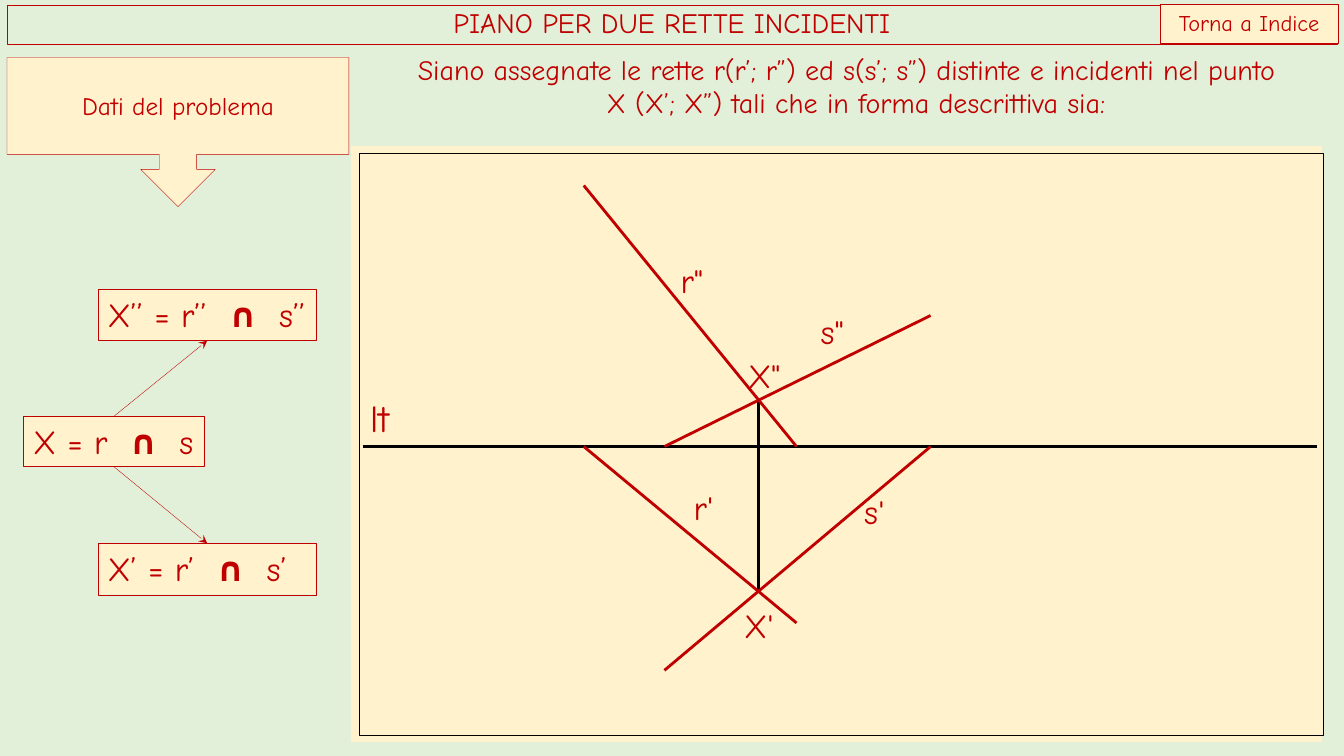
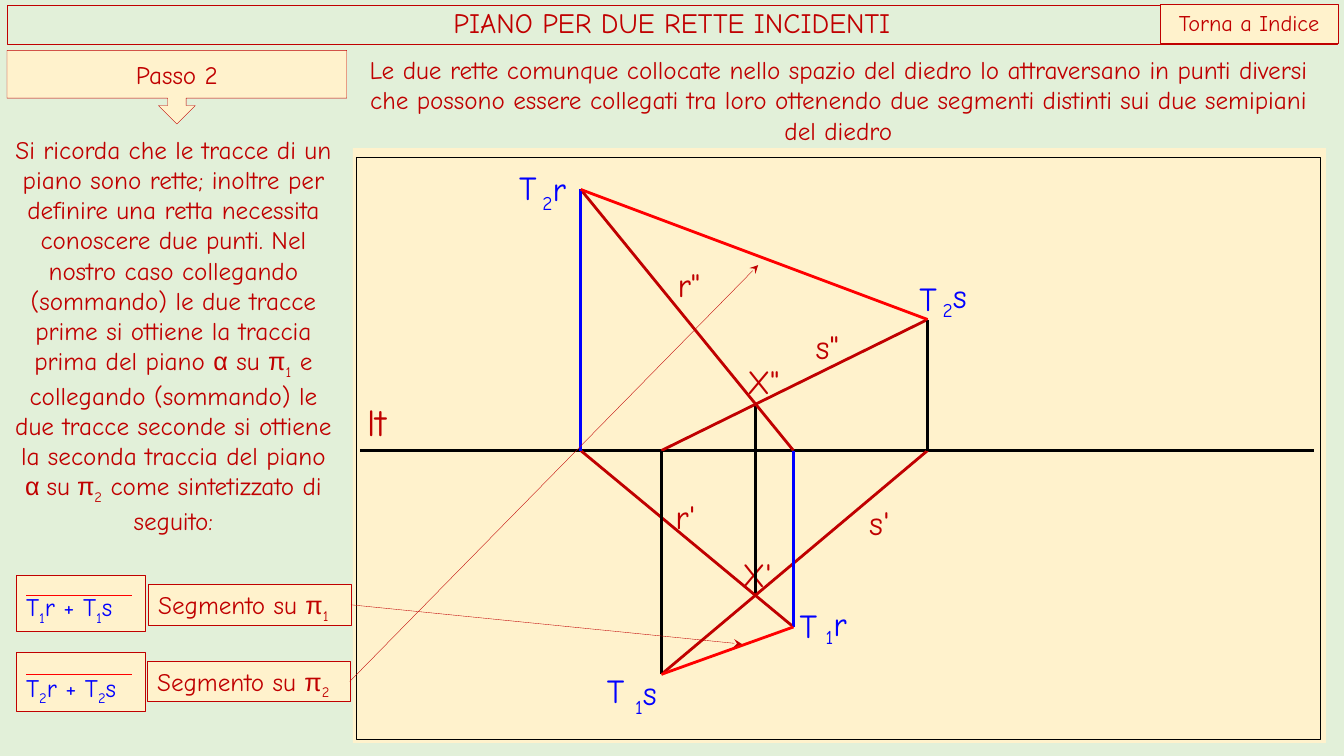
from lxml import etree
from pptx import Presentation
from pptx.dml.color import RGBColor
from pptx.enum import shapes, text
from pptx.oxml import ns
from pptx.util import Inches, Pt

COLORS = {
    "background": "E2F0D9",
    "paper": "FFF2CC",
    "dark_red": "C00000",
    "red": "FF0000",
    "blue": "0000FF",
    "black": "000000",
}
FONT = "Comic Neue"
GREEK_FONT = "Arial"
THIN = 0.25
HAIRLINE = 0
TOP, LEFT, BOTTOM, RIGHT = range(4)
RECTANGLE = shapes.MSO_SHAPE.RECTANGLE
CENTER = text.PP_ALIGN.CENTER
MIDDLE = text.MSO_ANCHOR.MIDDLE


def rgb(name):
    return RGBColor.from_string(COLORS[name])


def sub(value):
    return value, "sub"


def bold(value):
    return value, "bold"


def greek(value):
    return value, "greek"


def write(shape, paragraphs, size, color="dark_red", align=None,
          anchor=text.MSO_ANCHOR.TOP, grow=False):
    """Fill a shape with paragraphs: lists of strings or (string, style) runs."""
    frame = shape.text_frame
    frame.word_wrap = True
    frame.vertical_anchor = anchor
    if grow:
        frame.auto_size = text.MSO_AUTO_SIZE.SHAPE_TO_FIT_TEXT
    for index, parts in enumerate(paragraphs):
        paragraph = frame.add_paragraph() if index else frame.paragraphs[0]
        paragraph.alignment = align or text.PP_ALIGN.LEFT
        for part in parts:
            value, style = part if isinstance(part, tuple) else (part, None)
            run = paragraph.add_run()
            run.text = value
            run.font.size = Pt(size)
            run.font.name = GREEK_FONT if style == "greek" else FONT
            run.font.color.rgb = rgb(color)
            run.font.bold = style == "bold"
            if style == "sub":
                run._r.get_or_add_rPr().set("baseline", "-25000")
    return frame


def add_box(slide, box, fill="paper", line="dark_red", width=THIN, kind=RECTANGLE):
    shape = slide.shapes.add_shape(kind, *map(Inches, box))
    shape.shadow.inherit = False
    if fill:
        shape.fill.solid()
        shape.fill.fore_color.rgb = rgb(fill)
    else:
        shape.fill.background()
    if line:
        shape.line.color.rgb = rgb(line)
        shape.line.width = Pt(width)
    else:
        shape.line.fill.background()
    return shape


def add_text(slide, box, paragraphs, size):
    shape = slide.shapes.add_textbox(*map(Inches, box))
    write(shape, paragraphs, size, align=CENTER, grow=True)


def add_line(slide, start, end, color="dark_red", width=HAIRLINE, arrow=False):
    connector = slide.shapes.add_connector(
        shapes.MSO_CONNECTOR.STRAIGHT, *map(Inches, (*start, *end)))
    connector.line.color.rgb = rgb(color)
    connector.line.width = Pt(width)
    properties = connector._element.spPr
    if arrow:
        outline = properties.find(ns.qn("a:ln"))
        etree.SubElement(outline, ns.qn("a:tailEnd"), type="stealth")
    etree.SubElement(properties, ns.qn("a:effectLst"))
    return connector


def add_label(slide, parts, box, size=24, color="dark_red"):
    shape = add_box(slide, box, line=None)
    frame = write(shape, [parts], size, color, grow=True)
    frame.word_wrap = False
    frame.margin_left = frame.margin_right = 0
    frame.margin_top = frame.margin_bottom = 0


def add_callout(slide, box, caption):
    shape = add_box(slide, box, kind=shapes.MSO_SHAPE.DOWN_ARROW_CALLOUT)
    write(shape, [[caption]], 18, align=CENTER, anchor=MIDDLE)


def add_note(slide, box, parts, size):
    shape = add_box(slide, box)
    write(shape, [parts], size, grow=True)
    return shape


def add_slide(presentation):
    """Add a slide with the shared background, title band and index button."""
    slide = presentation.slides.add_slide(presentation.slide_layouts[6])
    slide.background.fill.solid()
    slide.background.fill.fore_color.rgb = rgb("background")
    title = add_box(slide, (0.07, 0.05, 13.19, 0.39), fill=None)
    frame = write(title, [["PIANO PER DUE RETTE INCIDENTI"]], 20,
                  align=CENTER, anchor=MIDDLE)
    frame.paragraphs[0].line_spacing = 0.9
    button = add_box(slide, (11.51, 0.04, 1.76, 0.39))
    write(button, [["Torna a Indice"]], 16, align=CENTER, grow=True)
    return slide


def projection_points(left, ground):
    """Points of the drawing, from the frame's left edge and the ground line."""
    offsets = {
        "ground_start": (0.03, 0), "ground_end": (9.49, 0),
        "X1": (3.95, 1.44), "X2": (3.95, -0.46),
        "T2r": (2.22, -2.59), "T2r_foot": (2.22, 0),
        "T1r": (4.33, 1.75), "T1r_foot": (4.33, 0),
        "T2s": (5.66, -1.3), "T2s_foot": (5.66, 0),
        "T1s": (3.02, 2.22), "T1s_foot": (3.02, 0),
    }
    return {name: (left + x, ground + y) for name, (x, y) in offsets.items()}


def add_projection(slide, panel, left, ground, labels):
    """Draw the panel, the labels and the projections of both lines."""
    add_box(slide, panel, line=None)
    add_box(slide, (left, ground - 2.91, 9.56, 5.78), line="black", width=HAIRLINE)
    add_label(slide, ["lt"], (left + 0.1, ground - 0.51, 0.29, 0.46), 27)
    for caption, box in labels.items():
        add_label(slide, [caption], box)
    points = projection_points(left, ground)
    for start, end, color in (
        ("ground_start", "ground_end", "black"),
        ("X2", "X1", "black"),
        ("T2s_foot", "T1s", "dark_red"),
        ("T1s_foot", "T2s", "dark_red"),
        ("T1r_foot", "T2r", "dark_red"),
        ("T1r", "T2r_foot", "dark_red"),
    ):
        add_line(slide, points[start], points[end], color)
    return points


def build_data_slide(presentation):
    slide = add_slide(presentation)
    add_text(slide, (3.62, 0.47, 9.65, 0.77), [
        ["Siano assegnate le rette r(r’; r”) ed s(s’; s”) distinte e incidenti nel punto "],
        [" X (X’; X”) tali che in forma descrittiva sia:"],
    ], 20)
    add_callout(slide, (0.07, 0.57, 3.39, 1.48), "Dati del problema")

    point = add_note(slide, (0.23, 4.13, 1.8, 0.5), ["X = r  ", bold("∩"), "  s"], 24)
    first = add_note(slide, (0.97, 5.39, 2.17, 0.51),
                     ["X’ = r’  ", bold("∩"), "  s’"], 24)
    second = add_note(slide, (0.97, 2.87, 2.17, 0.51),
                      ["X’’ = r’’  ", bold("∩"), "  s’’"], 24)
    for target, out_side, in_side in ((second, TOP, BOTTOM), (first, BOTTOM, TOP)):
        arrow = add_line(slide, (0, 0), (1, 1), width=THIN, arrow=True)
        arrow.begin_connect(point, out_side)
        arrow.end_connect(target, in_side)

    add_projection(slide, (3.48, 1.45, 9.63, 5.91), 3.57, 4.43, {
        "X'": (7.38, 6, 0.38, 0.41),
        "X\"": (7.42, 3.52, 0.39, 0.41),
        "r'": (6.88, 4.83, 0.3, 0.41),
        "r\"": (6.75, 2.58, 0.31, 0.41),
        "s\"": (8.14, 3.08, 0.31, 0.41),
        "s'": (8.57, 4.87, 0.3, 0.41),
    })


def add_trace_label(slide, number, name, letter_at, index_at):
    add_label(slide, ["T"], (*letter_at, 0.23, 0.4), color="blue")
    width = 0.26 if number == "1" else 0.3
    add_label(slide, [sub(number), name], (*index_at, width, 0.4), color="blue")


def add_segment_sum(slide, number, top, height, bar_y):
    """Box with the overlined sum of two traces."""
    shape = add_box(slide, (0.16, top, 1.28, height))
    frame = write(shape, [["T", sub(number), "r + T", sub(number), "s"]], 18,
                  "blue", anchor=text.MSO_ANCHOR.BOTTOM)
    frame.paragraphs[0].space_after = Pt(8)
    add_line(slide, (0.26, bar_y), (1.31, bar_y), "red", 0.5)


def build_step_slide(presentation):
    slide = add_slide(presentation)
    add_callout(slide, (0.07, 0.5, 3.37, 0.73), "Passo 2")
    add_text(slide, (0, 1.28, 3.44, 4.34), [[
        "Si ricorda che le tracce di un piano sono rette; inoltre per definire una "
        "retta necessita conoscere due punti. Nel nostro caso collegando (sommando) "
        "le due tracce prime si ottiene la traccia prima del piano ",
        greek("α"), " su ", greek("π"), sub("1"),
        " e collegando (sommando) le due tracce seconde si ottiene la seconda "
        "traccia del piano ",
        greek("α "), "su", greek(" π"), sub("2"), " come sintetizzato di seguito:",
    ]], 18)

    points = add_projection(slide, (3.5, 1.47, 9.65, 5.9), 3.54, 4.47, {
        "X'": (7.36, 5.5, 0.38, 0.4),
        "X\"": (7.41, 3.58, 0.39, 0.4),
        "r'": (6.7, 4.92, 0.24, 0.31),
        "r\"": (6.72, 2.62, 0.3, 0.4),
        "s\"": (8.09, 3.23, 0.31, 0.31),
        "s'": (8.62, 4.98, 0.3, 0.4),
    })
    for number, name, letter_at, index_at in (
        ("1", "s", (6.02, 6.65), (6.3, 6.67)),
        ("2", "s", (9.12, 2.76), (9.35, 2.73)),
        ("1", "r", (7.93, 6), (8.19, 5.98)),
        ("2", "r", (5.15, 1.66), (5.38, 1.67)),
    ):
        add_trace_label(slide, number, name, letter_at, index_at)
    for trace, color in (("T1r", "blue"), ("T2r", "blue"),
                         ("T1s", "black"), ("T2s", "black")):
        add_line(slide, points[trace], points[trace + "_foot"], color)
    for number in "12":
        add_line(slide, points[f"T{number}r"], points[f"T{number}s"], "red")

    for number, box, target in (
        ("1", (1.47, 5.8, 2.01, 0.4), (7.36, 6.39)),
        ("2", (1.46, 6.56, 2.01, 0.4), (7.52, 2.63)),
    ):
        note = add_note(slide, box, ["Segmento su ", greek("π"), sub(number)], 18)
        arrow = add_line(slide, (3.47, 6), target, width=THIN, arrow=True)
        arrow.begin_connect(note, RIGHT)

    add_text(slide, (3.49, 0.49, 9.65, 1.01), [[
        "Le due rette comunque collocate nello spazio del diedro lo attraversano in "
        "punti diversi che possono essere collegati tra loro ottenendo due segmenti "
        "distinti sui due semipiani del diedro"
    ]], 18)
    add_segment_sum(slide, "1", 5.71, 0.55, 5.91)
    add_segment_sum(slide, "2", 6.47, 0.59, 6.69)


def main():
    presentation = Presentation()
    presentation.slide_width = Inches(13.33)
    presentation.slide_height = Inches(7.5)
    build_data_slide(presentation)
    build_step_slide(presentation)
    presentation.save("out.pptx")


if __name__ == "__main__":
    main()
